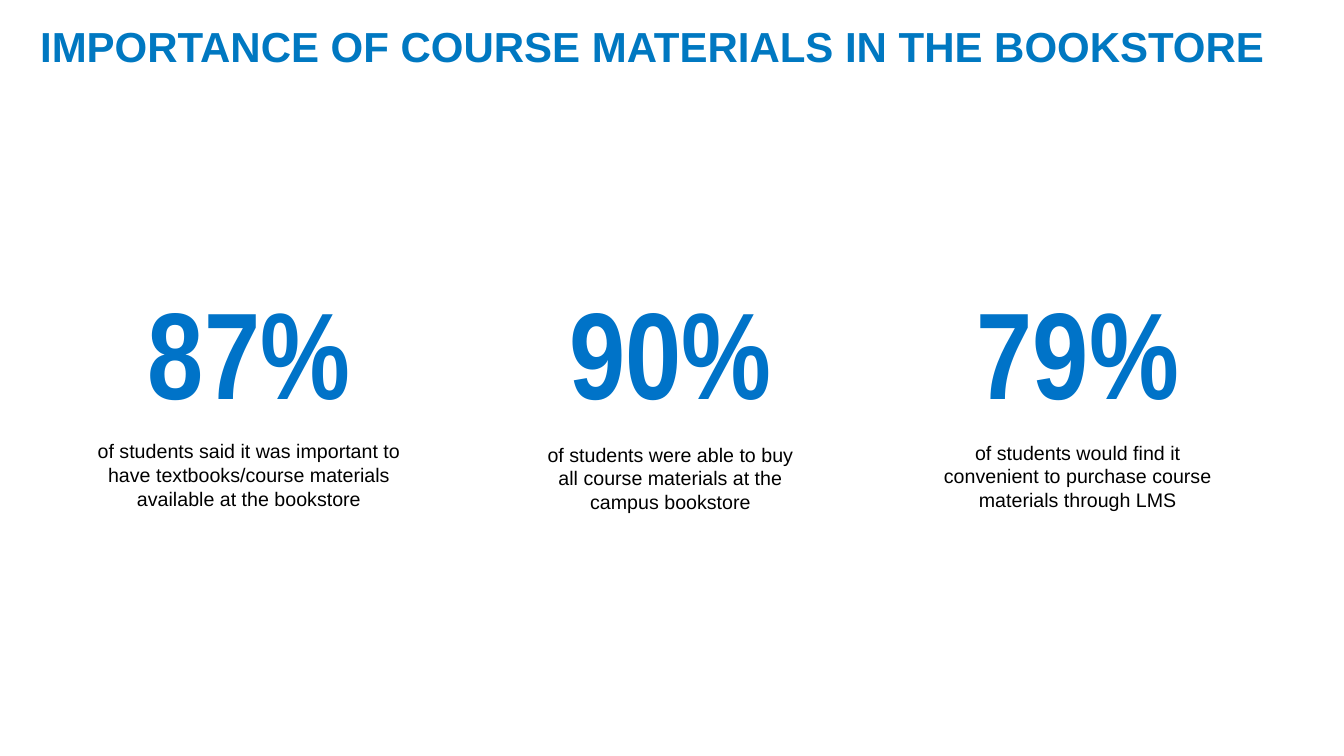
from pptx import Presentation
from pptx.dml.color import RGBColor
from pptx.enum.shapes import MSO_SHAPE
from pptx.enum.text import MSO_ANCHOR, MSO_AUTO_SIZE, PP_ALIGN
from pptx.util import Inches, Pt

TITLE_BLUE = RGBColor(0x00, 0x78, 0xC1)
NUMBER_BLUE = RGBColor(0x00, 0x73, 0xC8)
BLACK = RGBColor(0x00, 0x00, 0x00)
PROCESS = MSO_SHAPE.FLOWCHART_PROCESS
TOP = MSO_ANCHOR.TOP
FIT_SHAPE = MSO_AUTO_SIZE.SHAPE_TO_FIT_TEXT
LEFT = PP_ALIGN.LEFT
CENTER = PP_ALIGN.CENTER

NUMBER_TOP, NUMBER_WIDTH, NUMBER_HEIGHT = 2.69, 2.8, 1.58

STATISTICS = [
    ("87%", "of students said it was important to have textbooks/course materials "
            "available at the bookstore", 2.47, 4.31, 3.65, 0.99),
    ("90%", "of students were able to buy all course materials at the campus bookstore",
     6.65, 4.34, 2.86, 1.01),
    ("79%", "of students would find it convenient to purchase course materials through LMS",
     10.69, 4.32, 3.23, 0.99),
]


def write_text(shape, text, *, size, color, font="Arial", bold=False, align=LEFT, spacing=None):
    frame = shape.text_frame
    frame.word_wrap = True
    frame.vertical_anchor = TOP
    paragraph = frame.paragraphs[0]
    paragraph.alignment = align
    paragraph.line_spacing = spacing
    run = paragraph.add_run()
    run.text = text
    run.font.name = font
    run.font.size = Pt(size)
    run.font.bold = bold
    run.font.color.rgb = color


class StatisticsSlide:
    def __init__(self, presentation):
        self.slide = presentation.slides.add_slide(presentation.slide_layouts[6])
        self.number_style = dict(size=88, color=NUMBER_BLUE, font="Arial Narrow",
                                 bold=True, align=CENTER)
        self.caption_style = dict(size=14, color=BLACK, align=CENTER)
        self.title_style = dict(size=30, color=TITLE_BLUE, bold=True, spacing=0.9)

    def text_box(self, left, top, width, height, text, **style):
        box = self.slide.shapes.add_textbox(
            Inches(left), Inches(top), Inches(width), Inches(height))
        write_text(box, text, **style)
        return box

    def title(self, text):
        self.text_box(0.3, 0.21, 12.73, 0.66, text, **self.title_style)

    def number(self, center, text):
        box = self.text_box(center - NUMBER_WIDTH / 2, NUMBER_TOP, NUMBER_WIDTH,
                            NUMBER_HEIGHT, text, **self.number_style)
        box.text_frame.auto_size = FIT_SHAPE

    def caption(self, center, top, width, height, text):
        shape = self.slide.shapes.add_shape(
            PROCESS, Inches(center - width / 2), Inches(top), Inches(width), Inches(height))
        shape.shadow.inherit = False
        shape.fill.background()
        shape.line.fill.background()
        write_text(shape, text, **self.caption_style)


def main():
    presentation = Presentation()
    presentation.slide_width = Inches(13.33)
    presentation.slide_height = Inches(7.5)
    page = StatisticsSlide(presentation)
    page.title("IMPORTANCE OF COURSE MATERIALS IN THE BOOKSTORE")
    for number, caption, center, top, width, height in STATISTICS:
        page.caption(center, top, width, height, caption)
        page.number(center, number)
    presentation.save("out.pptx")


if __name__ == "__main__":
    main()
